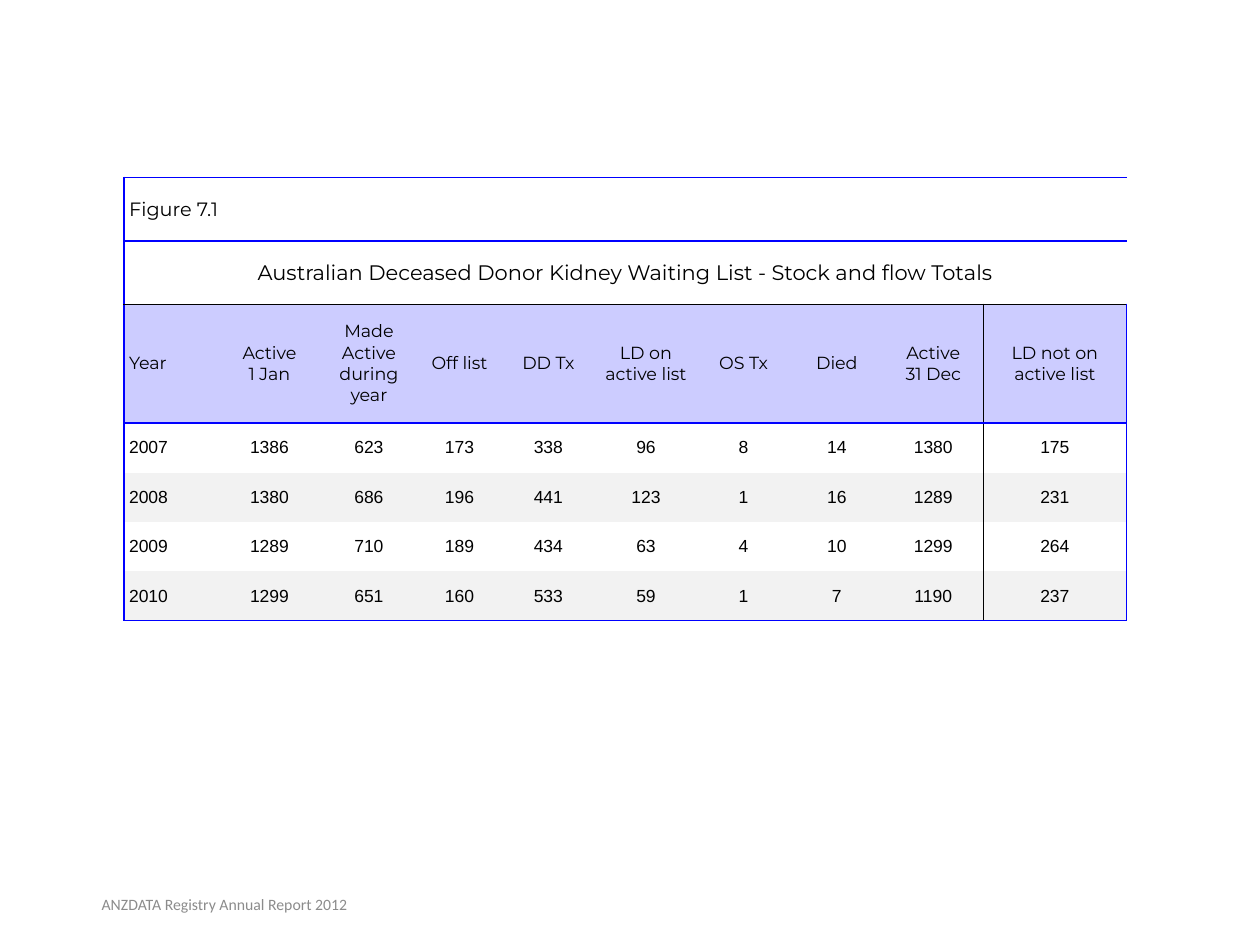
from lxml.etree import SubElement as Sub
from pptx import Presentation
from pptx.dml.color import RGBColor
from pptx.enum.text import MSO_ANCHOR as Anchor, PP_ALIGN as Align
from pptx.oxml.ns import qn
from pptx.util import Pt

BLACK = RGBColor(0, 0, 0)
WHITE = RGBColor(255, 255, 255)
BLUE = RGBColor(0, 0, 255)
LILAC = RGBColor(0xCC, 0xCC, 0xFF)
PALE = RGBColor(0xF2, 0xF2, 0xF2)
GREY = RGBColor(0x8C, 0x8C, 0x8C)

HEAD = "Montserrat"
BODY = "Arial"
FOOT = "Calibri"

THICK = (BLUE, 1)
THIN = (BLACK, 0.5)

FIGURE = "Figure 7.1"
TITLE = "Australian Deceased Donor Kidney Waiting List - Stock and flow Totals"
LABELS = ["Year", "Active\n1 Jan", "Made\nActive during year", "Off list", "DD Tx",
          "LD on active list", "OS Tx", "Died", "Active\n31 Dec",
          "LD not on\nactive list"]
DATA = [
    [2007, 1386, 623, 173, 338, 96, 8, 14, 1380, 175],
    [2008, 1380, 686, 196, 441, 123, 1, 16, 1289, 231],
    [2009, 1289, 710, 189, 434, 63, 4, 10, 1299, 264],
    [2010, 1299, 651, 160, 533, 59, 1, 7, 1190, 237],
]
WIDTHS = [54, 58.3, 55.4, 48.2, 53.3, 58.3, 53.3, 53.3, 56.9, 82.1]
HEIGHTS = [36.2, 36.2, 68, 28.25, 28.25, 28.25, 28.25]
TOP = 2  # index of the label row


def write(frame, text, size=10, font=BODY, color=BLACK, align=Align.CENTER):
    """Fill a text frame, one paragraph per line."""
    frame.word_wrap = True
    for i, line in enumerate(text.split("\n")):
        para = frame.add_paragraph() if i else frame.paragraphs[0]
        para.alignment = align
        run = para.add_run()
        run.text = line
        run.font.size = Pt(size)
        run.font.name = font
        run.font.color.rgb = color


def edge(cell, side, line):
    """Draw one border of a cell, or clear it when line is None."""
    ln = Sub(cell._tc.get_or_add_tcPr(), qn(f"a:ln{side}"))
    if line is None:
        Sub(ln, qn("a:noFill"))
        return
    color, width = line
    ln.set("w", str(Pt(width)))
    fill = Sub(ln, qn("a:solidFill"))
    Sub(fill, qn("a:srgbClr")).set("val", str(color))


def rule(row):
    """Give the horizontal line above a row; the last index is the bottom."""
    if row == TOP:
        return THIN
    return THICK if row in (0, 1, TOP + 1, len(HEIGHTS)) else None


def post(row, col):
    """Give the vertical line left of a column; the last index is the right."""
    if col in (0, len(WIDTHS)):
        return THICK
    return THIN if row >= TOP and col == len(WIDTHS) - 1 else None


def shade(row):
    if row == TOP:
        return LILAC
    return PALE if row > TOP and row % 2 == 0 else WHITE


def style(cell, row, col):
    """Set margins, borders and fill of one cell."""
    cell.margin_left = cell.margin_right = Pt(3)
    cell.margin_top = cell.margin_bottom = Pt(2)
    cell.vertical_anchor = Anchor.MIDDLE
    edge(cell, "L", post(row, col))
    edge(cell, "R", post(row, col + 1))
    edge(cell, "T", rule(row))
    edge(cell, "B", rule(row + 1))
    cell.fill.solid()
    cell.fill.fore_color.rgb = shade(row)


def add_stock(slide, left, top, width, height):
    """Place the waiting list table."""
    table = slide.shapes.add_table(len(HEIGHTS), len(WIDTHS), Pt(left), Pt(top),
                                   Pt(width), Pt(height)).table
    table.first_row = table.horz_banding = False
    for col, size in zip(table.columns, WIDTHS):
        col.width = Pt(size * width / sum(WIDTHS))
    for row, size in zip(table.rows, HEIGHTS):
        row.height = Pt(size * height / sum(HEIGHTS))
    for row in range(len(HEIGHTS)):
        for col in range(len(WIDTHS)):
            style(table.cell(row, col), row, col)

    # Caption rows across the full width
    for row in range(TOP):
        table.cell(row, 0).merge(table.cell(row, len(WIDTHS) - 1))
    write(table.cell(0, 0).text_frame, FIGURE, size=11, font=HEAD, align=Align.LEFT)
    write(table.cell(1, 0).text_frame, TITLE, size=12, font=HEAD)

    # Labels and yearly figures
    for row, items in enumerate([LABELS] + DATA, TOP):
        for col, item in enumerate(items):
            write(table.cell(row, col).text_frame, str(item),
                  font=HEAD if row == TOP else BODY,
                  align=Align.CENTER if col else Align.LEFT)


def add_foot(slide, left, top, width, height):
    """Place the report name at the bottom."""
    box = slide.shapes.add_textbox(Pt(left), Pt(top), Pt(width), Pt(height))
    box.text_frame.vertical_anchor = Anchor.MIDDLE
    write(box.text_frame, "ANZDATA Registry Annual Report 2012",
          size=9, font=FOOT, color=GREY)


def main():
    deck = Presentation()
    deck.slide_width, deck.slide_height = Pt(720), Pt(540)
    slide = deck.slides.add_slide(deck.slide_layouts[6])
    add_stock(slide, 70.8, 101.4, 573.1, 253.4)
    add_foot(slide, 14.2, 502.5, 228, 28.8)
    deck.save("out.pptx")


if __name__ == "__main__":
    main()
